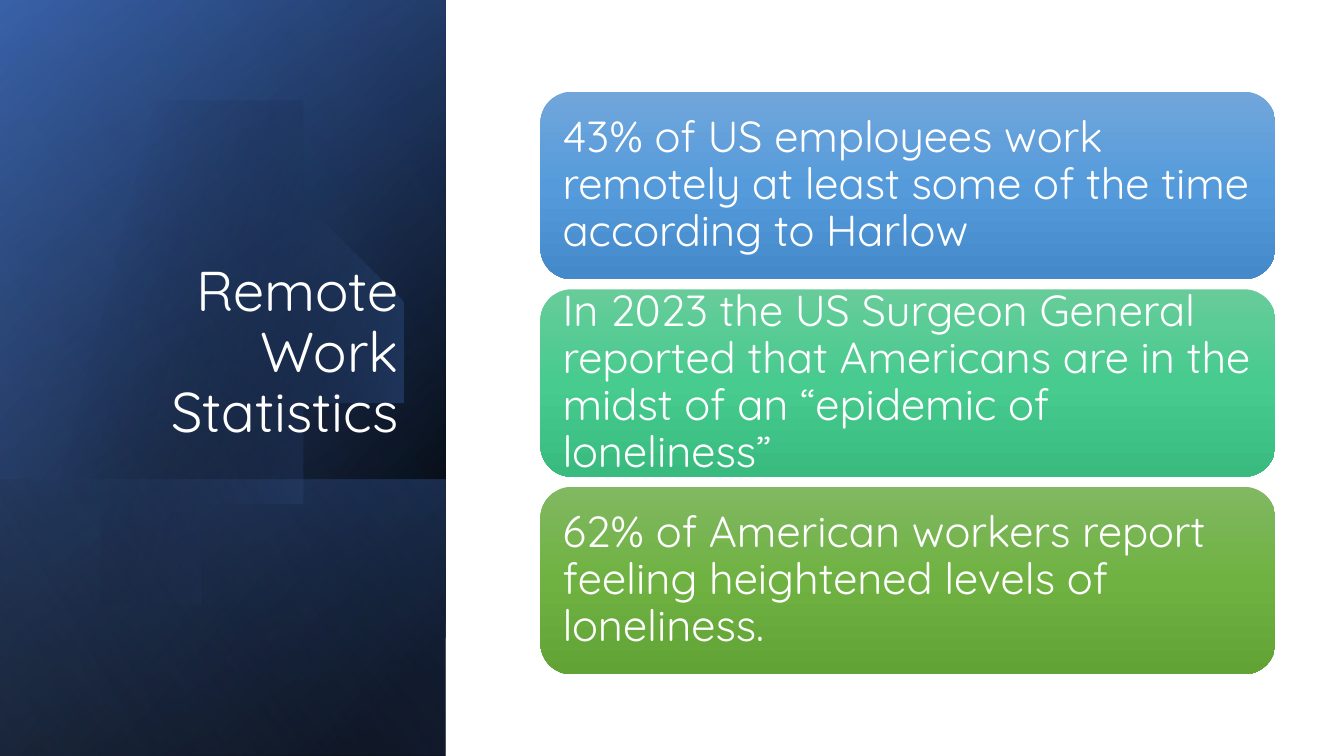
import pptx
import pptx.dml.color
import pptx.enum.shapes
import pptx.enum.text
import pptx.oxml
import pptx.oxml.ns
import pptx.util

Inches = pptx.util.Inches
SHAPES = pptx.enum.shapes.MSO_SHAPE
ANCHOR = pptx.enum.text.MSO_ANCHOR
ALIGN = pptx.enum.text.PP_ALIGN

WIDTH, HEIGHT = 13.33, 7.5
PANEL_WIDTH = 4.42
FOOT_HEIGHT = 2.74
COLORS = {
    "black": "000000", "navy": "2F5597", "blue": "4472C4", "pale": "8FAADC",
    "white": "FFFFFF",
    "sky top": "71A6DB", "sky middle": "559BDB", "sky bottom": "448ACA",
    "mint top": "67CC9A", "mint middle": "47CB8E", "mint bottom": "39BB7F",
    "leaf top": "81B861", "leaf middle": "6FB242", "leaf bottom": "62A336",
}


def fill_with_gradient(shape, stops, angle):
    """Stops are (position %, colour name, opacity %); the angle runs clockwise."""
    stop_xml = "".join(
        f'<a:gs pos="{position * 1000}"><a:srgbClr val="{COLORS[color]}">'
        f'<a:alpha val="{opacity * 1000}"/></a:srgbClr></a:gs>'
        for position, color, opacity in stops)
    gradient = pptx.oxml.parse_xml(
        f'<a:gradFill {pptx.oxml.ns.nsdecls("a")} rotWithShape="1">'
        f'<a:gsLst>{stop_xml}</a:gsLst>'
        f'<a:lin ang="{angle * 60000}" scaled="0"/></a:gradFill>')
    shape.shadow.inherit = False
    shape.line.fill.background()
    shape.fill.background()
    no_fill = shape._element.spPr.find(pptx.oxml.ns.qn("a:noFill"))
    no_fill.getparent().replace(no_fill, gradient)


def write_text(shape, text, size, alignment, anchor):
    frame = shape.text_frame
    frame.word_wrap = True
    frame.vertical_anchor = anchor
    paragraph = frame.paragraphs[0]
    paragraph.alignment = alignment
    paragraph.line_spacing = 0.9
    run = paragraph.add_run()
    run.text = text
    run.font.name = "Quicksand"
    run.font.size = pptx.util.Pt(size)
    run.font.color.rgb = pptx.dml.color.RGBColor.from_string(COLORS["white"])


presentation = pptx.Presentation()
presentation.slide_width = Inches(WIDTH)
presentation.slide_height = Inches(HEIGHT)
slide = presentation.slides.add_slide(presentation.slide_layouts[6])
shapes = slide.shapes

# Left panel: layered gradients, each a rectangle turned on its side
layers = [
    (HEIGHT, [(8, "black", 100), (100, "navy", 100)], 50),
    (HEIGHT, [(0, "black", 0), (99, "blue", 46)], 30),
    (FOOT_HEIGHT, [(2, "blue", 29), (100, "black", 30)], 130),
    ("disc", [(29, "black", 0), (100, "blue", 43)], 14),
    (HEIGHT, [(0, "black", 0), (99, "pale", 11)], 120),
]
disc_start = (1.49, 1.1)
disc_curves = [
    [(2.46, 1.12), (3.35, 1.77), (3.63, 2.75)],
    [(3.98, 3.97), (3.28, 5.23), (2.07, 5.58)],
    [(1.31, 5.8), (0.53, 5.61), (-0.03, 5.14)],
    [(-0.15, 5.03), (-0.15, 5.03), (-0.15, 5.03)],
    [(-0.15, 1.75), (-0.15, 1.75), (-0.15, 1.75)],
    [(0, 1.61), (0, 1.61), (0, 1.61)],
    [(0.23, 1.42), (0.5, 1.28), (0.8, 1.19)],
    [(1.03, 1.13), (1.26, 1.1), disc_start],
]
CURVE_STEPS = 16
for extent, stops, angle in layers:
    if extent == "disc":
        points = []
        start = disc_start
        for first, second, end in disc_curves:
            for step in range(1, CURVE_STEPS + 1):
                t = step / CURVE_STEPS
                points.append(tuple(
                    (1 - t) ** 3 * a + 3 * (1 - t) ** 2 * t * b
                    + 3 * (1 - t) * t ** 2 * c + t ** 3 * d
                    for a, b, c, d in zip(start, first, second, end)))
            start = end
        builder = shapes.build_freeform(*disc_start, scale=Inches(1))
        builder.add_line_segments(points, close=True)
        layer = builder.convert_to_shape()
    else:
        layer = shapes.add_shape(
            SHAPES.RECTANGLE,
            Inches((PANEL_WIDTH - extent) / 2),
            Inches(HEIGHT - (extent + PANEL_WIDTH) / 2),
            Inches(extent), Inches(PANEL_WIDTH))
        layer.rotation = 90
        layer._element.spPr.xfrm.set("flipH", "1")
    fill_with_gradient(layer, stops, angle)

title = shapes.add_textbox(Inches(0.64), Inches(1.84), Inches(3.41), Inches(2.62))
write_text(title, "Remote Work Statistics", 40, ALIGN.RIGHT, ANCHOR.BOTTOM)

# Right side: one column of equal cards
CARD_LEFT, CARD_TOP, CARD_WIDTH, CARD_HEIGHT, CARD_PITCH = 5.36, 0.91, 7.29, 1.86, 1.96
CARD_INSET = Inches(0.13)
cards = [
    ("sky", "43% of US employees work remotely at least some of the time "
            "according to Harlow"),
    ("mint", "In 2023 the US Surgeon General reported that Americans are in the "
             "midst of an “epidemic of loneliness”"),
    ("leaf", "62% of American workers report feeling heightened levels of "
             "loneliness."),
]
for row, (tone, statistic) in enumerate(cards):
    card = shapes.add_shape(
        SHAPES.ROUNDED_RECTANGLE,
        Inches(CARD_LEFT), Inches(CARD_TOP + row * CARD_PITCH),
        Inches(CARD_WIDTH), Inches(CARD_HEIGHT))
    fill_with_gradient(card, [(0, f"{tone} top", 100), (50, f"{tone} middle", 100),
                              (100, f"{tone} bottom", 100)], 90)
    frame = card.text_frame
    frame.margin_left = frame.margin_right = CARD_INSET
    frame.margin_top = frame.margin_bottom = CARD_INSET
    write_text(card, statistic, 31, ALIGN.LEFT, ANCHOR.MIDDLE)

presentation.save("out.pptx")
